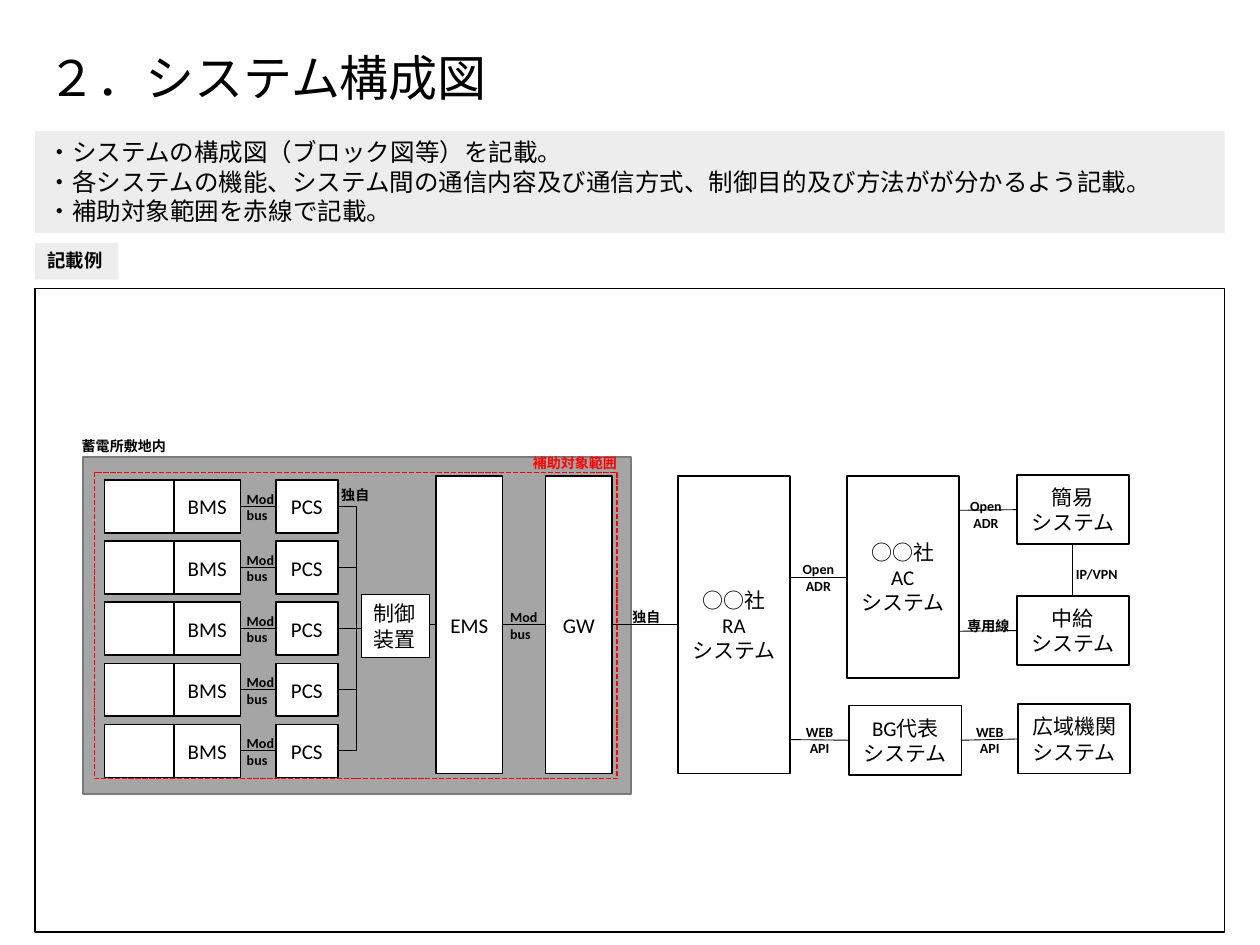
from pptx import Presentation
from pptx.dml.color import RGBColor
from pptx.enum.dml import MSO_LINE
from pptx.enum.shapes import MSO_CONNECTOR, MSO_SHAPE
from pptx.enum.text import MSO_ANCHOR, MSO_AUTO_SIZE, PP_ALIGN
from pptx.oxml.ns import qn
from pptx.util import Inches, Pt
from lxml import etree

RECT = MSO_SHAPE.RECTANGLE
STRAIGHT, ELBOW = MSO_CONNECTOR.STRAIGHT, MSO_CONNECTOR.ELBOW
LEFT, CENTER = PP_ALIGN.LEFT, PP_ALIGN.CENTER
TOP, MIDDLE = MSO_ANCHOR.TOP, MSO_ANCHOR.MIDDLE
GROW, FIXED = MSO_AUTO_SIZE.SHAPE_TO_FIT_TEXT, MSO_AUTO_SIZE.NONE
DASH = MSO_LINE.SQUARE_DOT
S_TOP, S_LEFT, S_BOTTOM, S_RIGHT = range(4)
BLACK, WHITE, RED = "000000", "FFFFFF", "FF0000"
PALE, GRAY, DARK_GRAY = "EDEDED", "A5A5A5", "7A7A7A"
FONT = "Calibri"


def rgb(value):
    return RGBColor.from_string(value)


def write(sp, text, size=12, color=BLACK, bold=False, align=LEFT,
          anchor=TOP, wrap=True, fit=FIXED, spacing=None):
    """Fill a shape with text, one paragraph for each line."""
    tf = sp.text_frame
    tf.word_wrap, tf.auto_size, tf.vertical_anchor = wrap, fit, anchor
    for i, line in enumerate(text.split("\n")):
        p = tf.add_paragraph() if i else tf.paragraphs[0]
        p.alignment = align
        if spacing:
            p.line_spacing = spacing
        r = p.add_run()
        r.text = line
        r.font.name, r.font.size, r.font.bold = FONT, Pt(size), bold
        r.font.color.rgb = rgb(color)
    return sp


def rect(s, x, y, w, h, fill=None, line=BLACK, weight=1, dash=None):
    sp = s.shapes.add_shape(RECT, Inches(x), Inches(y), Inches(w), Inches(h))
    sp.shadow.inherit = False
    if fill:
        sp.fill.solid()
        sp.fill.fore_color.rgb = rgb(fill)
    else:
        sp.fill.background()
    if line:
        sp.line.color.rgb = rgb(line)
        sp.line.width = Pt(weight)
        if dash:
            sp.line.dash_style = dash
    else:
        sp.line.fill.background()
    return sp


def block(s, text, x, y, w, h):
    return write(rect(s, x, y, w, h, WHITE), text, align=CENTER, anchor=MIDDLE)


def label(s, text, x, y, w=0.45, h=0.37, **fmt):
    sp = s.shapes.add_textbox(Inches(x), Inches(y), Inches(w), Inches(h))
    return write(sp, text, size=8, bold=True, fit=GROW, **fmt)


def connect(s, start, end, kind=STRAIGHT):
    """Join two ends, each a (shape, side) pair or an (x, y) point in inches."""
    points = [(0, 0) if hasattr(e[0], "shape_id") else (Inches(e[0]), Inches(e[1]))
              for e in (start, end)]
    c = s.shapes.add_connector(kind, *points[0], *points[1])
    for e, join in ((start, c.begin_connect), (end, c.end_connect)):
        if hasattr(e[0], "shape_id"):
            join(*e)
    c.line.color.rgb = rgb(BLACK)
    c.line.width = Pt(0.5)
    etree.SubElement(c._element.spPr, qn("a:effectLst"))
    return c


def header(s, x, y, w):
    """Title, instructions and the example tag."""
    title = s.shapes.title
    title.left, title.top = Inches(x), Inches(y)
    title.width, title.height = Inches(w), Inches(0.82)
    write(title, "２．システム構成図", size=28, anchor=MIDDLE, spacing=0.9)
    notes = ("・システムの構成図（ブロック図等）を記載。\n"
             "・各システムの機能、システム間の通信内容及び通信方式、"
             "制御目的及び方法がが分かるよう記載。\n"
             "・補助対象範囲を赤線で記載。")
    write(rect(s, x, y + 0.81, w, 0.81, PALE, None), notes, size=14, fit=GROW)
    write(rect(s, x, y + 1.7, 0.66, 0.29, PALE, None), "記載例",
          size=10.5, bold=True, wrap=False, fit=GROW)


def storage_site(s, x, y, w, h):
    """Storage site with its battery rows; returns the gateway block."""
    rect(s, x, y, w, h, GRAY, DARK_GRAY)
    ems = block(s, "EMS", x + 2.8, y + 0.15, 0.53, 2.36)
    gw = block(s, "GW", x + 3.67, y + 0.15, 0.53, 2.36)
    connect(s, (ems, S_RIGHT), (gw, S_LEFT))

    # Five battery rows meeting at the control unit
    rows, pitch, row_h = 5, 0.485, 0.42
    hub = (x + 2.32, y + 1.36)
    for i in range(rows):
        top = y + 0.18 + i * pitch
        rect(s, x + 0.17, top, 1.08, row_h, WHITE)
        bms = block(s, "BMS", x + 0.72, top, 0.53, row_h)
        pcs = block(s, "PCS", x + 1.53, top, 0.49, row_h)
        connect(s, (bms, S_RIGHT), (pcs, S_LEFT))
        goal = (ems, S_LEFT) if i == rows // 2 else hub
        connect(s, (pcs, S_RIGHT), goal, ELBOW)
        label(s, "Mod\nbus", x + 1.2, top + 0.03)
    write(rect(s, x + 2.21, y + 1.09, 0.54, 0.5, WHITE, weight=0.75),
          "制御\n装置", wrap=False, fit=GROW)

    # Subsidised range and captions
    rect(s, x + 0.09, y + 0.12, 4.15, 2.43, line=RED, dash=DASH)
    label(s, "補助対象範囲", x + 3.47, y - 0.07, 0.88, 0.24, color=RED, wrap=False)
    label(s, "蓄電所敷地内", x - 0.11, y - 0.21, 0.88, 0.24, wrap=False)
    label(s, "独自", x + 1.95, y + 0.18, h=0.24)
    label(s, "Modbus", x + 3.29, y + 1.15)
    return gw


def outside_systems(s, x, y, gw):
    """Systems beyond the site, fed by the gateway."""
    bw, bh = 0.89, 0.55
    ac_x, end_x = x + 1.34, x + 2.69
    ra = block(s, "○○社\nRA\nシステム", x, y, bw, 2.36)
    ac = block(s, "○○社\nAC\nシステム", ac_x, y, bw, 1.6)
    simple = block(s, "簡易\nシステム", end_x, y - 0.01, bw, bh)
    dispatch = block(s, "中給\nシステム", end_x, y + 0.95, bw, bh)
    bg = block(s, "BG代表\nシステム", ac_x + 0.02, y + 1.82, bw, bh)
    wide = block(s, "広域機関\nシステム", end_x + 0.01, y + 1.81, bw, bh)

    connect(s, (gw, S_RIGHT), (ra, S_LEFT))
    connect(s, (x + bw, y + 0.8), (ac, S_LEFT))
    connect(s, (x + bw, y + 2.09), (bg, S_LEFT))
    connect(s, (ac_x + bw, y + 0.27), (simple, S_LEFT))
    connect(s, (ac_x + bw, y + 1.23), (dispatch, S_LEFT))
    connect(s, (bg, S_RIGHT), (wide, S_LEFT))
    connect(s, (simple, S_BOTTOM), (dispatch, S_TOP))

    label(s, "独自", x - 0.46, y + 1, h=0.24)
    for text, dx, dy in (("Open\nADR", 0.89, 0.62), ("Open\nADR", 2.22, 0.12),
                         ("WEB\nAPI", 0.9, 1.91), ("WEB\nAPI", 2.25, 1.91)):
        label(s, text, x + dx, y + dy, align=CENTER)
    label(s, "専用線", x + 2.19, y + 1.07, 0.55, 0.24, align=CENTER)
    label(s, "IP/VPN", x + 3.04, y + 0.66, 0.57, 0.24, align=CENTER)


def main():
    prs = Presentation()
    prs.slide_width, prs.slide_height = Inches(10), Inches(7.5)
    s = prs.slides.add_slide(prs.slide_layouts[5])
    header(s, 0.28, 0.23, 9.44)
    rect(s, 0.28, 2.29, 9.44, 5.11)
    gw = storage_site(s, 0.66, 3.63, 4.35, 2.67)
    outside_systems(s, 5.38, 3.78, gw)
    prs.save("out.pptx")


if __name__ == "__main__":
    main()
